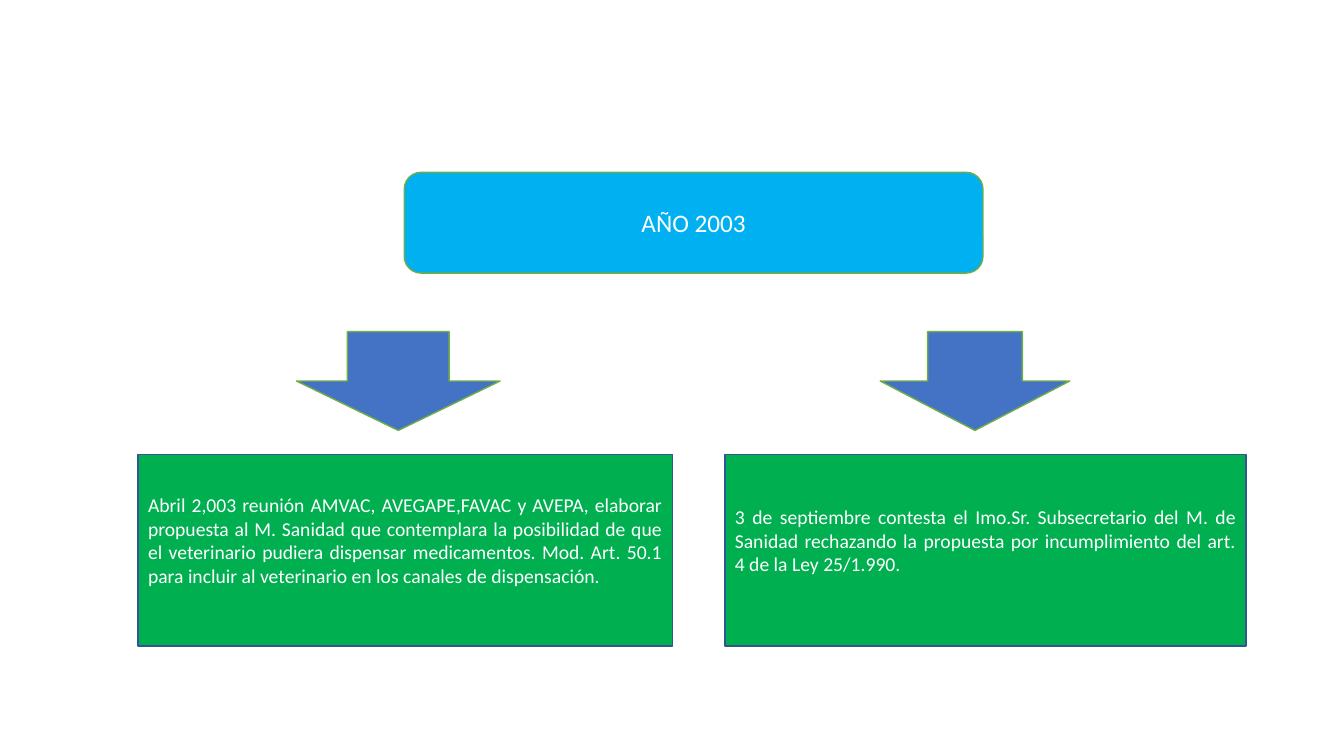
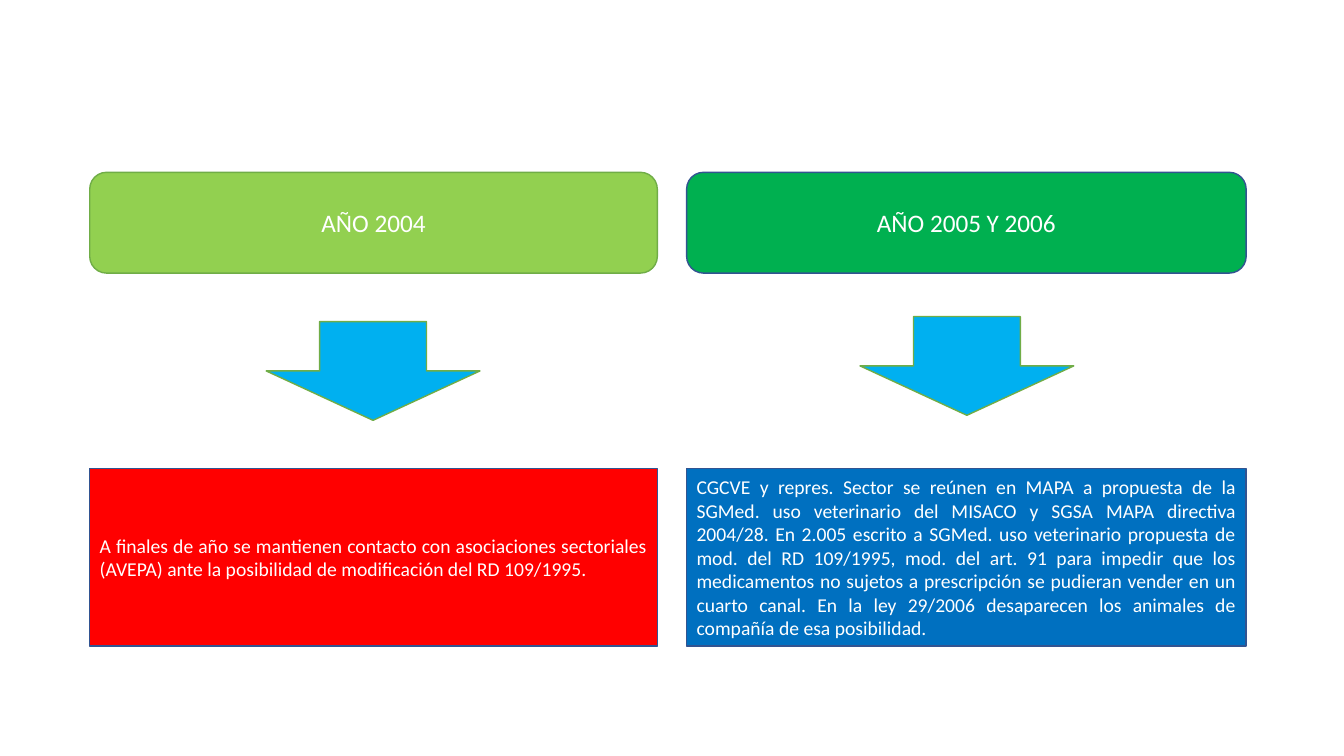
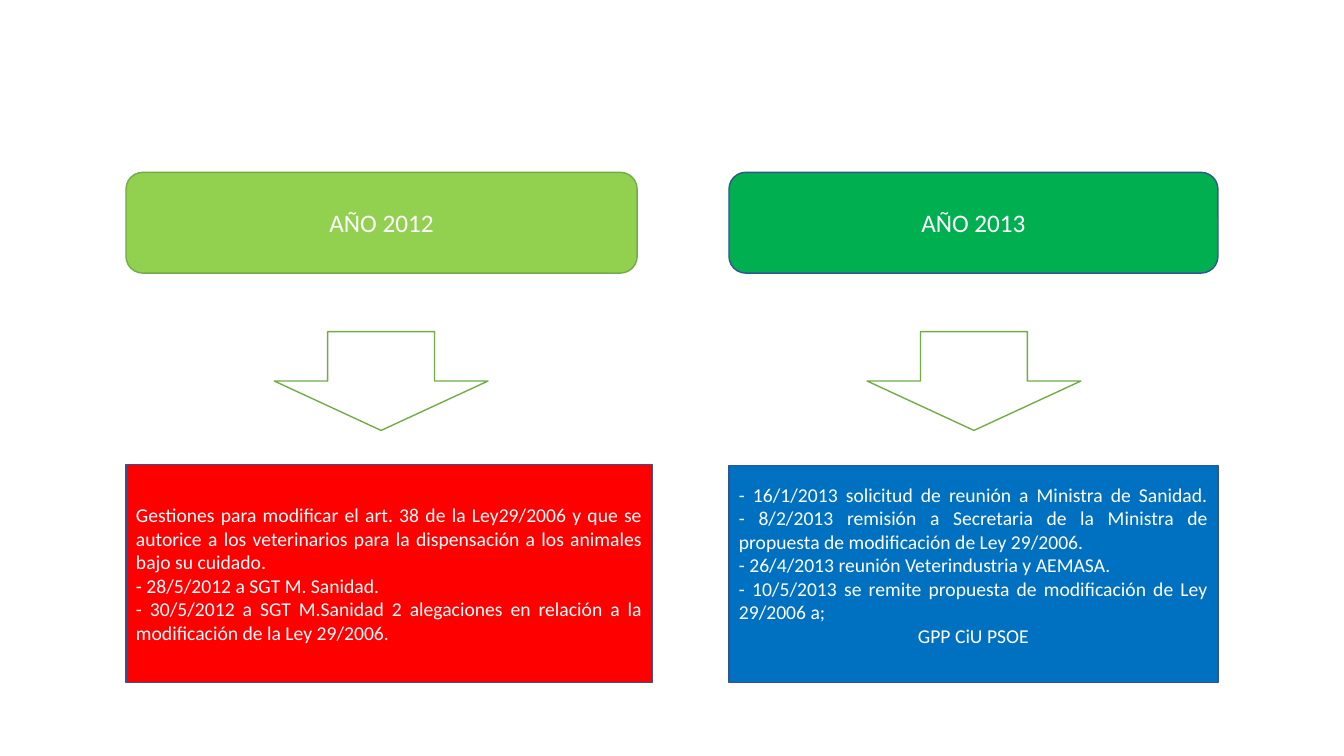
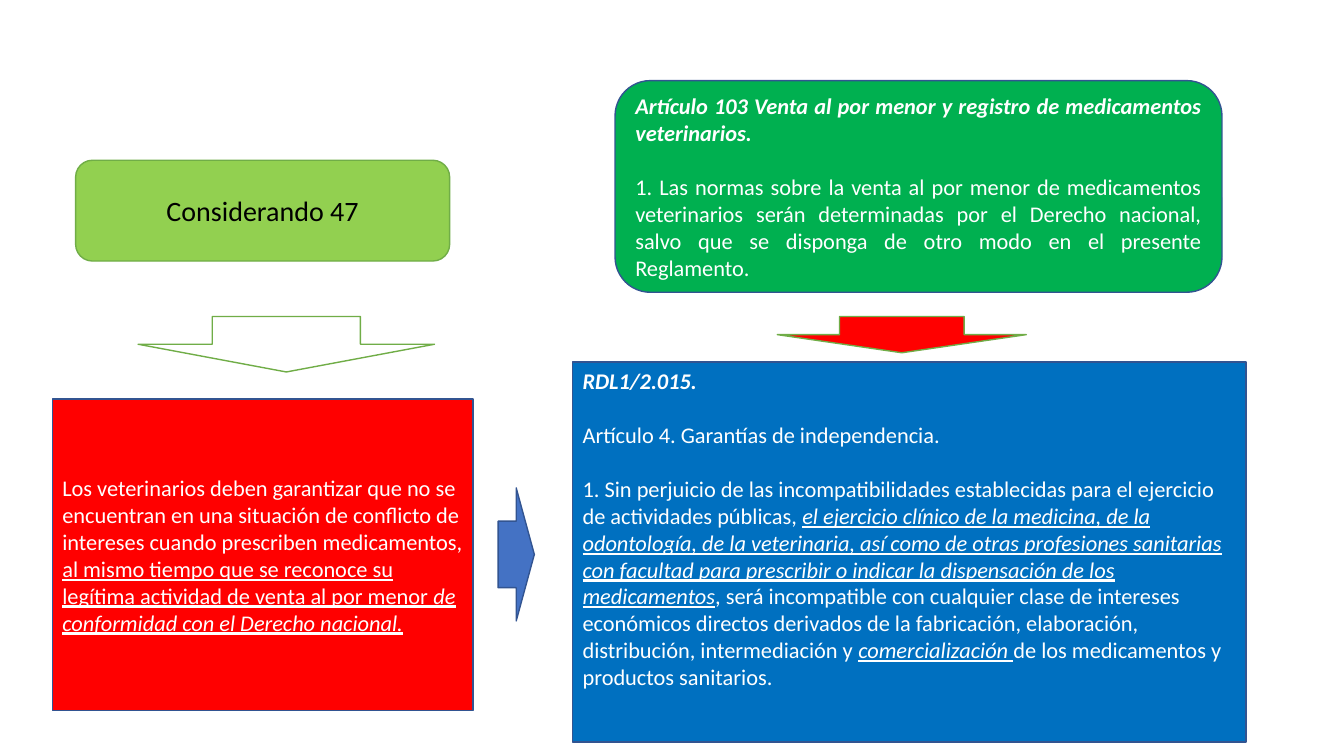
from dataclasses import dataclass

from pptx import Presentation
from pptx.dml.color import RGBColor
from pptx.enum.shapes import MSO_SHAPE
from pptx.enum.text import MSO_ANCHOR, PP_ALIGN
from pptx.util import Inches, Pt

ROUNDED, RECTANGLE = MSO_SHAPE.ROUNDED_RECTANGLE, MSO_SHAPE.RECTANGLE
DOWN, RIGHT = MSO_SHAPE.DOWN_ARROW, MSO_SHAPE.RIGHT_ARROW
CENTER, JUSTIFY, LEFT = PP_ALIGN.CENTER, PP_ALIGN.JUSTIFY, PP_ALIGN.LEFT
TOP, MIDDLE = MSO_ANCHOR.TOP, MSO_ANCHOR.MIDDLE


@dataclass(frozen=True)
class Theme:
    font: str = "Calibri"
    heading: int = 18
    recital: int = 20
    body: int = 14
    law: int = 16
    outline: int = 1
    blank_line: float = 19.5
    inset: float = 0.05
    white: str = "FFFFFF"
    black: str = "000000"
    sky: str = "00B0F0"
    steel: str = "4472C4"
    lime: str = "92D050"
    green: str = "00B050"
    red: str = "FF0000"
    blue: str = "0070C0"
    green_line: str = "70AD47"
    blue_line: str = "325491"


THEME = Theme()
SLIDE_SIZE = (13.33, 7.5)
HEADING_ROW = (1.71, 1)
ARROW_ROW = (3.29, 0.98)


@dataclass
class Para:
    """Spans are (text, style) pairs; a style holds any of the letters b, i, u."""
    spans: list
    align: object = None
    before: float = 0


@dataclass
class Part:
    preset: object
    across: tuple  # left, width
    down: tuple  # top, height
    fill: str
    line: str
    paras: tuple = ()
    size: int = THEME.body
    color: str = THEME.white
    align: object = JUSTIFY
    anchor: object = MIDDLE
    space_below: float = 0


def heading(text, across, fill, line=THEME.green_line, down=HEADING_ROW, **style):
    style = {"size": THEME.heading, "align": CENTER, **style}
    return Part(ROUNDED, across, down, fill, line, (text,), **style)


def arrow(across, fill, down=ARROW_ROW):
    return Part(DOWN, across, down, fill, THEME.green_line)


def body(paras, across, down, fill, **style):
    return Part(RECTANGLE, across, down, fill, THEME.blue_line, paras, **style)


YEAR_2003_ROW = (4.51, 1.9)
YEAR_2004_ROW = (4.65, 1.76)
YEAR_2004, YEAR_2005 = (0.89, 5.63), (6.81, 5.55)
YEAR_2013 = (7.23, 4.85)

SLIDES = [
    [
        heading("AÑO 2003", (4.01, 5.74), THEME.sky),
        arrow((2.94, 2.02), THEME.steel),
        arrow((8.73, 1.88), THEME.steel),
        body(("Abril 2,003 reunión AMVAC, AVEGAPE,FAVAC y AVEPA, elaborar propuesta al "
              "M. Sanidad que contemplara la posibilidad de que el veterinario pudiera "
              "dispensar medicamentos. Mod. Art. 50.1 para incluir al veterinario en los "
              "canales de dispensación.",),
             (1.37, 5.3), YEAR_2003_ROW, THEME.green, space_below=0.2),
        body(("3 de septiembre contesta el Imo.Sr. Subsecretario del M. de Sanidad "
              "rechazando la propuesta por incumplimiento del art. 4 de la Ley 25/1.990.",),
             (7.19, 5.17), YEAR_2003_ROW, THEME.green, space_below=0.2),
    ],
    [
        heading("AÑO 2004", YEAR_2004, THEME.lime),
        heading("AÑO 2005 Y 2006", YEAR_2005, THEME.green, THEME.blue_line),
        arrow((2.64, 2.12), THEME.sky, (3.19, 0.98)),
        arrow((8.53, 2.12), THEME.sky, (3.14, 0.98)),
        body(("A finales de año se mantienen contacto con asociaciones sectoriales (AVEPA) "
              "ante la posibilidad de modificación del RD 109/1995.",),
             YEAR_2004, YEAR_2004_ROW, THEME.red),
        body(("CGCVE y repres. Sector se reúnen en MAPA a propuesta de la SGMed. uso "
              "veterinario del MISACO y SGSA MAPA directiva 2004/28. En 2.005 escrito a "
              "SGMed. uso veterinario propuesta de mod. del RD 109/1995, mod. del art. 91 "
              "para impedir que los medicamentos no sujetos a prescripción se pudieran "
              "vender en un cuarto canal. En la ley 29/2006 desaparecen los animales de "
              "compañía de esa posibilidad.",),
             YEAR_2005, YEAR_2004_ROW, THEME.blue),
    ],
    [
        heading("AÑO 2012", (1.25, 5.07), THEME.lime),
        heading("AÑO 2013", YEAR_2013, THEME.green, THEME.blue_line),
        arrow((2.72, 2.12), THEME.white),
        arrow((8.6, 2.12), THEME.white),
        body(("Gestiones para modificar el art. 38 de la Ley29/2006 y que se autorice a los "
              "veterinarios para la dispensación a los animales bajo su cuidado.",
              "- 28/5/2012 a SGT M. Sanidad.",
              "- 30/5/2012 a SGT M.Sanidad 2 alegaciones en relación a la modificación de "
              "la Ley 29/2006."),
             (1.25, 5.22), (4.61, 2.16), THEME.red),
        body(("- 16/1/2013 solicitud de reunión a Ministra de Sanidad.\n"
              "- 8/2/2013 remisión a Secretaria de la Ministra de propuesta de "
              "modificación de Ley 29/2006.",
              "- 26/4/2013 reunión Veterindustria y AEMASA.",
              "- 10/5/2013 se remite propuesta de modificación de Ley 29/2006 a;",
              Para([("GPP CiU PSOE", "")], CENTER)),
             YEAR_2013, (4.62, 2.15), THEME.blue, space_below=0.18),
    ],
    [
        heading("Considerando 47", (0.75, 3.71), THEME.lime, down=(1.59, 1),
                size=THEME.recital, color=THEME.black),
        arrow((1.37, 2.94), THEME.white, (3.14, 0.55)),
        arrow((7.71, 2.47), THEME.red, (3.14, 0.36)),
        body((Para([
            ("Los veterinarios deben garantizar que no se encuentran en una situación de "
             "conflicto de intereses cuando prescriben medicamentos, ", ""),
            ("al mismo tiempo que se reconoce su legítima actividad de venta al por "
             "menor ", "u"),
            ("de conformidad con el Derecho nacional.", "iu")]),),
             (0.52, 4.17), (3.96, 3.09), THEME.red, size=THEME.law, align=LEFT),
        body((
            Para([("RDL1/2.015.", "bi")]),
            Para([("Artículo 4. Garantías de independencia.", "")],
                 before=THEME.blank_line),
            Para([
                ("1. Sin perjuicio de las incompatibilidades establecidas para el ejercicio "
                 "de actividades públicas, ", ""),
                ("el ejercicio clínico de la medicina, de la odontología, de la "
                 "veterinaria, así como de otras profesiones sanitarias con facultad para "
                 "prescribir o indicar la dispensación de los medicamentos", "iu"),
                (", será incompatible con cualquier clase de intereses económicos directos "
                 "derivados de la fabricación, elaboración, distribución, intermediación "
                 "y ", ""),
                ("comercialización ", "iu"),
                ("de los medicamentos y productos sanitarios.", "")],
                before=THEME.blank_line)),
             (5.68, 6.68), (3.59, 3.77), THEME.blue, size=THEME.law, align=LEFT,
             anchor=TOP),
        Part(ROUNDED, (6.1, 6.02), (0.8, 2.1), THEME.green, THEME.blue_line, (
            Para([("Artículo 103 Venta al por menor y registro de medicamentos "
                   "veterinarios.", "bi")]),
            Para([("1. Las normas sobre la venta al por menor de medicamentos veterinarios "
                   "serán determinadas por el Derecho nacional, salvo que se disponga de "
                   "otro modo en el presente Reglamento.", "")],
                 before=THEME.blank_line)), size=THEME.law),
        Part(RIGHT, (4.94, 0.36), (4.84, 1.32), THEME.steel, THEME.blue_line),
    ],
]


def add_text(para, text, *, size, color, style=""):
    for index, line in enumerate(text.split("\n")):
        if index:
            para.add_line_break()
        span = para.add_run()
        span.text = line
        font = span.font
        font.name, font.size = THEME.font, Pt(size)
        font.color.rgb = RGBColor.from_string(color)
        font.bold, font.italic, font.underline = (letter in style for letter in "biu")


def fill_frame(frame, part):
    frame.word_wrap = True
    frame.vertical_anchor = part.anchor
    frame.margin_bottom = Inches(THEME.inset + part.space_below)
    for index, entry in enumerate(part.paras):
        content = entry if isinstance(entry, Para) else Para([(entry, "")])
        para = frame.add_paragraph() if index else frame.paragraphs[0]
        para.alignment = part.align if content.align is None else content.align
        if content.before:
            para.space_before = Pt(content.before)
        for text, style in content.spans:
            add_text(para, text, size=part.size, color=part.color, style=style)


def add_part(page, part):
    (left, width), (top, height) = part.across, part.down
    box = page.shapes.add_shape(
        part.preset, Inches(left), Inches(top), Inches(width), Inches(height))
    box.shadow.inherit = False
    box.fill.solid()
    box.fill.fore_color.rgb = RGBColor.from_string(part.fill)
    box.line.color.rgb = RGBColor.from_string(part.line)
    box.line.width = Pt(THEME.outline)
    if part.paras:
        fill_frame(box.text_frame, part)


def main():
    deck = Presentation()
    deck.slide_width, deck.slide_height = map(Inches, SLIDE_SIZE)
    blank = deck.slide_layouts.get_by_name("Blank")
    for parts in SLIDES:
        page = deck.slides.add_slide(blank)
        for part in parts:
            add_part(page, part)
    deck.save("out.pptx")


if __name__ == "__main__":
    main()
